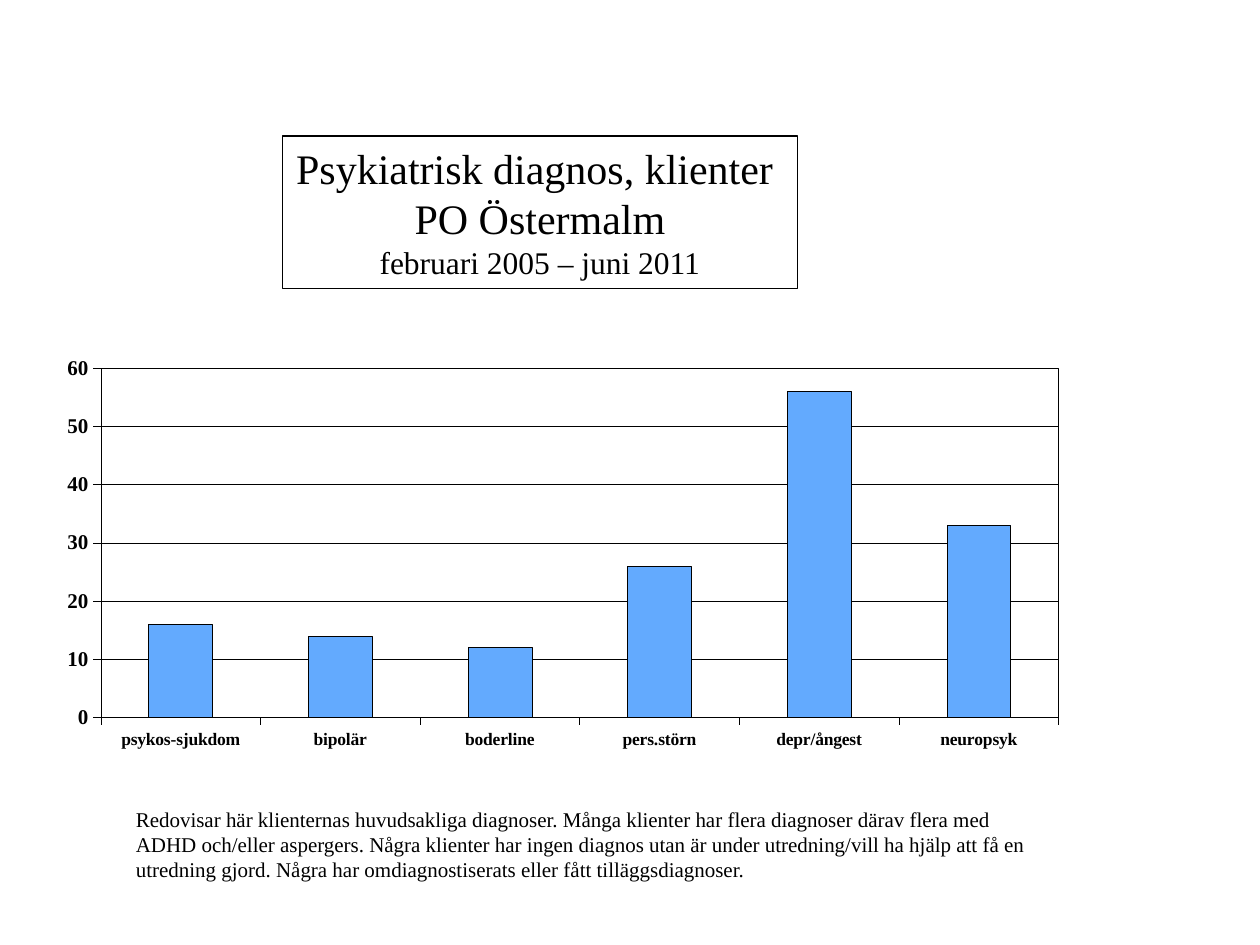
from dataclasses import dataclass

from lxml.etree import SubElement
from pptx import Presentation
from pptx.chart.data import CategoryChartData
from pptx.dml.color import RGBColor
from pptx.enum.chart import XL_CHART_TYPE, XL_TICK_MARK
from pptx.enum.shapes import MSO_SHAPE
from pptx.enum.text import MSO_ANCHOR, PP_ALIGN
from pptx.oxml import parse_xml
from pptx.oxml.ns import nsdecls, qn
from pptx.util import Inches, Pt

WIDE, HIGH = Inches(10), Inches(7.5)


@dataclass(frozen=True)
class Theme:
    face: str = "Times New Roman"
    ink: RGBColor = RGBColor(0, 0, 0)
    bar: RGBColor = RGBColor(0x63, 0xAA, 0xFE)
    title: int = 24
    period: int = 18
    body: int = 12
    label: int = 10
    hair: float = 0.25
    frame: float = 0.75


@dataclass(frozen=True)
class Area:
    """A place in percent of the width and height around it."""
    left: float
    top: float
    width: float
    height: float

    def box(self) -> tuple:
        return (int(WIDE * self.left / 100), int(HIGH * self.top / 100),
                int(WIDE * self.width / 100), int(HIGH * self.height / 100))


@dataclass(frozen=True)
class Line:
    text: str
    size: int


THEME = Theme()
COUNTS = {"psykos-sjukdom": 16, "bipolär": 14, "boderline": 12,
          "pers.störn": 26, "depr/ångest": 56, "neuropsyk": 33}
TITLE = [Line("Psykiatrisk diagnos, klienter \vPO Östermalm", THEME.title),
         Line("februari 2005 – juni 2011", THEME.period)]
NOTE = [Line("Redovisar här klienternas huvudsakliga diagnoser. Många klienter "
             "har flera diagnoser därav flera med ADHD och/eller aspergers. "
             "Några klienter har ingen diagnos utan är under utredning/vill ha "
             "hjälp att få en utredning gjord. Några har omdiagnostiserats "
             "eller fått tilläggsdiagnoser.", THEME.body)]


def style(font, size: int, bold: bool = False) -> None:
    font.name, font.size, font.bold = THEME.face, Pt(size), bold
    font.color.rgb = THEME.ink


def rule(line, width: float) -> None:
    line.color.rgb, line.width = THEME.ink, Pt(width)


def write(frame, lines: list[Line], align: PP_ALIGN) -> None:
    frame.word_wrap = True
    frame.vertical_anchor = MSO_ANCHOR.TOP
    for i, line in enumerate(lines):
        para = frame.add_paragraph() if i else frame.paragraphs[0]
        para.text, para.alignment = line.text, align
        style(para.font, line.size)


def place(field, area: Area) -> None:
    """Fix and outline the inner plot area."""
    layout = field.find(qn("c:layout"))
    if layout is None:
        layout = parse_xml(f"<c:layout {nsdecls('c')}/>")
        field.insert(0, layout)
    manual = SubElement(layout, qn("c:manualLayout"))
    parts = {"layoutTarget": "inner", "xMode": "edge", "yMode": "edge",
             "x": area.left / 100, "y": area.top / 100,
             "w": area.width / 100, "h": area.height / 100}
    for tag, val in parts.items():
        SubElement(manual, qn(f"c:{tag}")).set("val", str(val))
    field.append(parse_xml(
        f'<c:spPr {nsdecls("c", "a")}><a:noFill/>'
        f'<a:ln w="{int(Pt(THEME.hair))}"><a:solidFill>'
        f'<a:srgbClr val="{THEME.ink}"/></a:solidFill></a:ln></c:spPr>'))


def graph(slide, area: Area, inner: Area) -> None:
    data = CategoryChartData()
    data.categories = list(COUNTS)
    data.add_series("Series 1", list(COUNTS.values()))
    kind = XL_CHART_TYPE.COLUMN_CLUSTERED
    chart = slide.shapes.add_chart(kind, *area.box(), data).chart
    chart.has_legend = chart.has_title = False
    style(chart.font, THEME.body, True)

    # Bars
    plot = chart.plots[0]
    plot.gap_width, plot.vary_by_categories = 150, False
    bars = plot.series[0].format
    bars.fill.solid()
    bars.fill.fore_color.rgb = THEME.bar
    rule(bars.line, THEME.hair)

    # Axes and grid
    for axis, size in ((chart.category_axis, THEME.label),
                       (chart.value_axis, THEME.body)):
        style(axis.tick_labels.font, size, True)
        rule(axis.format.line, THEME.hair)
        axis.major_tick_mark = XL_TICK_MARK.OUTSIDE
        axis.minor_tick_mark = XL_TICK_MARK.NONE
    scale = chart.value_axis
    scale.minimum_scale, scale.maximum_scale, scale.major_unit = 0, 60, 10
    rule(scale.major_gridlines.format.line, THEME.hair)
    place(chart.element.find(".//" + qn("c:plotArea")), inner)


def main() -> None:
    deck = Presentation()
    deck.slide_width, deck.slide_height = WIDE, HIGH
    slide = deck.slides.add_slide(deck.slide_layouts[6])

    # Chart
    graph(slide, Area(2.2, 34.13, 84, 50.4), Area(6.9, 9.6, 90.5, 73.3))

    # Framed title
    card = slide.shapes.add_shape(MSO_SHAPE.RECTANGLE,
                                  *Area(22.4, 14.4, 40.9, 16.13).box())
    card.shadow.inherit = False
    card.fill.background()
    rule(card.line, THEME.frame)
    write(card.text_frame, TITLE, PP_ALIGN.CENTER)

    # Note under the chart
    note = slide.shapes.add_textbox(*Area(9.8, 84.67, 74, 9.47).box())
    write(note.text_frame, NOTE, PP_ALIGN.LEFT)

    deck.save("out.pptx")


if __name__ == "__main__":
    main()
